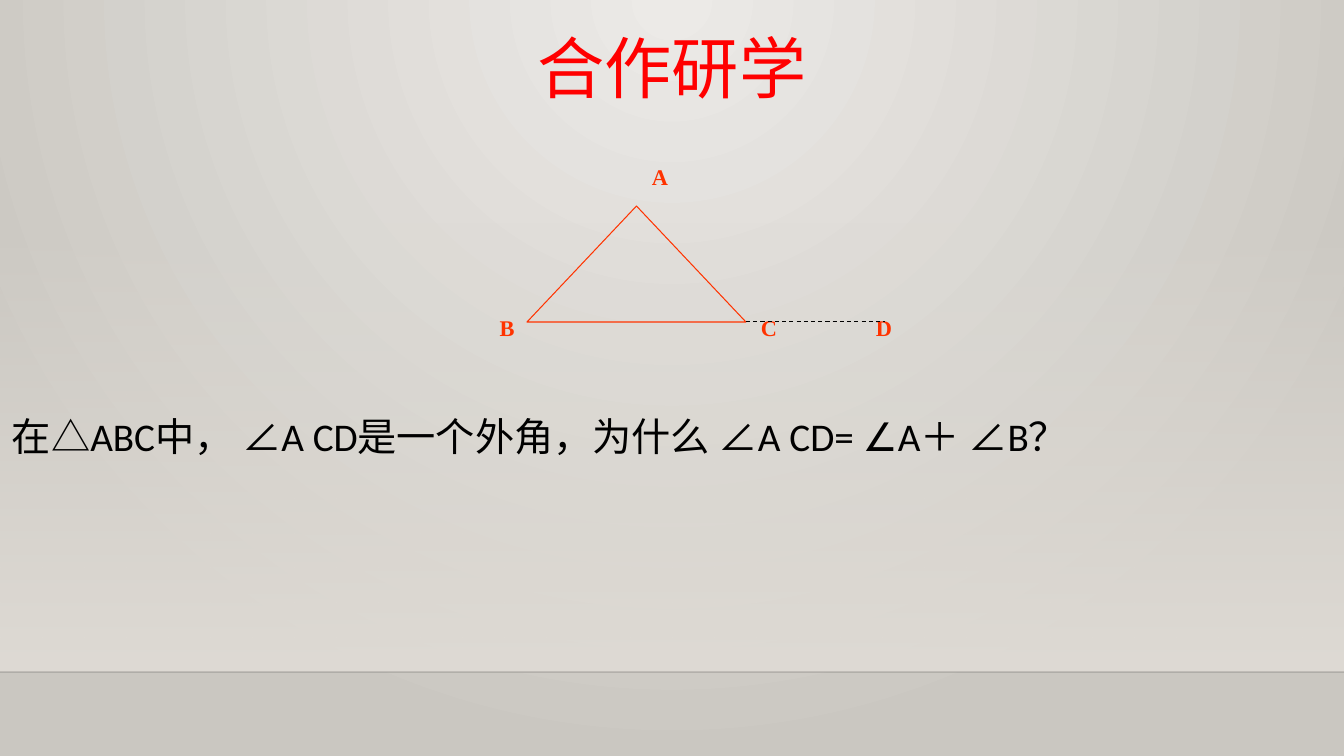
from pptx import Presentation
from pptx.dml.color import RGBColor
from pptx.enum.dml import MSO_LINE
from pptx.enum.shapes import MSO_CONNECTOR, MSO_SHAPE
from pptx.enum.text import MSO_ANCHOR, PP_ALIGN
from pptx.oxml.ns import qn
from pptx.util import Emu, Pt
from lxml.etree import SubElement

PX = 914400 / 100.8
WIDTH, HEIGHT = 1344, 756
NO_STYLE = "{2D5ABB26-0587-4C30-8999-92F81FD0307C}"
COLORS = {
    "glow": "ECEAE7",
    "edge": "CAC7C1",
    "wall": "DFDBD5",
    "rule": "000001",
    "title": "FF0000",
    "figure": "FF3300",
    "text": "000000",
}


def px(*lengths):
    return [Emu(round(length * PX)) for length in lengths]


def color(name):
    return RGBColor.from_string(COLORS[name])


def set_alpha(parent, percent):
    """Make the first colour inside an element partly transparent."""
    tint = next(parent.iter(qn("a:srgbClr")))
    SubElement(tint, qn("a:alpha")).set("val", str(percent * 1000))


class Board:
    """Holds the current page and draws the elements of the lesson on it."""

    def __init__(self, page):
        self.page = page
        self.shapes = page.shapes

    def gradient(self, fill, *names):
        fill.gradient()
        for stop, name in zip(fill.gradient_stops, names):
            stop.color.rgb = color(name)

    def backdrop(self):
        """Radial background that glows from the top centre."""
        self.gradient(self.page.background.fill, "glow", "edge")
        gradient = next(self.page.element.iter(qn("a:gradFill")))
        gradient.remove(gradient.find(qn("a:lin")))
        circle = SubElement(gradient, qn("a:path"), path="circle")
        SubElement(circle, qn("a:fillToRect"), l="43000", t="0", r="43000", b="100000")

    def wall(self, *frame):
        """Band that fades in from top to bottom."""
        band = self.shapes.add_shape(MSO_SHAPE.RECTANGLE, *px(*frame))
        band.shadow.inherit = False
        band.line.fill.background()
        self.gradient(band.fill, "wall", "wall")
        band.fill.gradient_angle = 270
        set_alpha(band.element.spPr, 0)

    def triangle(self, *frame):
        shape = self.shapes.add_shape(MSO_SHAPE.ISOSCELES_TRIANGLE, *px(*frame))
        shape.shadow.inherit = False
        shape.fill.background()
        shape.line.color.rgb = color("figure")
        shape.line.width = Pt(0.75)

    def line(self, left, right, y, name, width, dash=None, alpha=None):
        rule = self.shapes.add_connector(MSO_CONNECTOR.STRAIGHT, *px(left, y, right, y))
        rule.line.color.rgb = color(name)
        rule.line.width = Pt(width)
        if dash:
            rule.line.dash_style = dash
        if alpha is not None:
            set_alpha(rule.element.spPr, alpha)
        SubElement(rule.element.spPr, qn("a:effectLst"))

    def style(self, para, size, name, font="Calibri", bold=False):
        para.font.size = Pt(size)
        para.font.name = font
        para.font.bold = bold
        para.font.color.rgb = color(name)

    def text(self, words, frame, *style, spacing=None):
        box = self.shapes.add_textbox(*px(*frame))
        box.text_frame.word_wrap = True
        para = box.text_frame.paragraphs[0]
        para.text = words
        para.alignment = PP_ALIGN.CENTER
        para.line_spacing = spacing
        self.style(para, *style)

    def question(self, words, *frame):
        """One-cell table without borders or fill."""
        holder = self.shapes.add_table(1, 1, *px(*frame))
        next(holder.element.iter(qn("a:tableStyleId"))).text = NO_STYLE
        holder.table.first_row = holder.table.horz_banding = False
        cell = holder.table.cell(0, 0)
        cell.fill.background()
        cell.vertical_anchor = MSO_ANCHOR.TOP
        cell.margin_left, cell.margin_right = px(12, 12)
        cell.margin_top = cell.margin_bottom = 0
        para = cell.text_frame.paragraphs[0]
        para.text = words
        para.line_spacing = 1.5
        self.style(para, 28, "text")


def main():
    deck = Presentation()
    deck.slide_width, deck.slide_height = px(WIDTH, HEIGHT)
    board = Board(deck.slides.add_slide(deck.slide_layouts[6]))

    board.backdrop()
    board.wall(0, 222, WIDTH, 450)
    board.line(0, WIDTH, 672, "rule", 1, alpha=20)
    board.text("合作研学", (67, 30, 1210, 126), 48, "title", spacing=0.9)
    board.question("在△ABC中， ∠A CD是一个外角，为什么 ∠A CD= ∠A＋ ∠B？",
                   0, 378, WIDTH, 141)

    board.triangle(527, 206, 219, 116)
    for vertex, center, top in (("A", 660, 158), ("B", 507, 309),
                                ("C", 769, 309), ("D", 884, 309)):
        board.text(vertex, (center - 45, top, 90, 40),
                   16, "figure", "Times New Roman", True)
    board.line(746, 885, 322, "text", 0.75, dash=MSO_LINE.DASH)

    deck.save("out.pptx")


if __name__ == "__main__":
    main()
